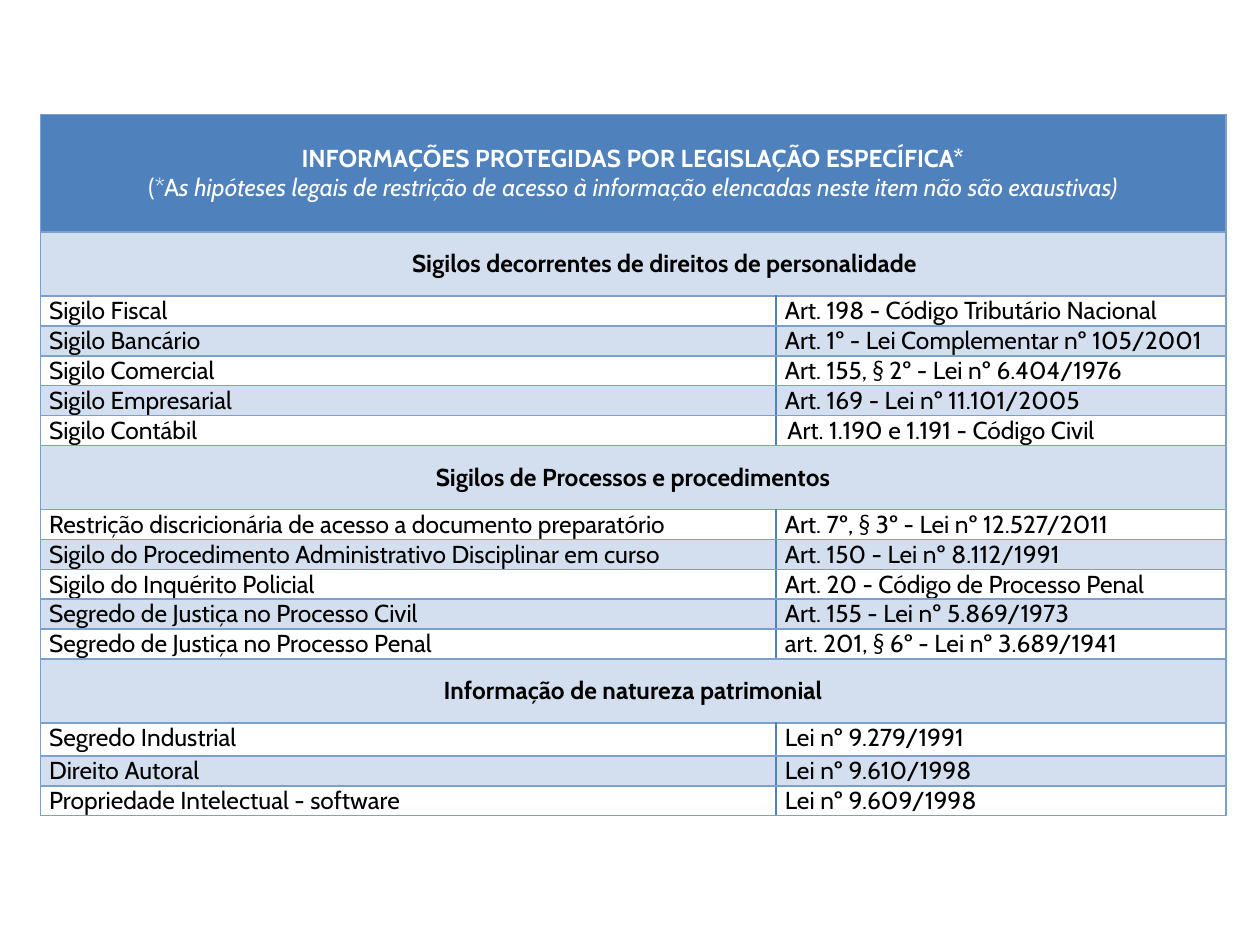
from pptx import Presentation
from pptx import util as u
from pptx.dml.color import RGBColor
from pptx.enum import text
from pptx.oxml.ns import qn
from lxml import etree

BLUE = RGBColor(0x4F, 0x81, 0xBD)
BORDER = RGBColor(0x7B, 0xA0, 0xCD)
PALE = RGBColor(0xD3, 0xDF, 0xEE)
WHITE = RGBColor(0xFF, 0xFF, 0xFF)
BLACK = RGBColor(0, 0, 0)
FONT, SIZE = "Cabin", 14

# Content: runs are (wording, bold, italic)
HEADING = [
    [("INFORMAÇÕES PROTEGIDAS POR LEGISLAÇÃO ESPECÍFICA*", True, False)],
    [("(*A", False, False),
     ("s hipóteses legais de restrição de acesso à informação elencadas "
      "neste item não são exaustivas)", False, True)],
]
SECTIONS = [
    ("Sigilos decorrentes de direitos de personalidade", [
        ("Sigilo Fiscal", "Art. 198 - Código Tributário Nacional"),
        ("Sigilo Bancário", "Art. 1º - Lei Complementar nº 105/2001"),
        ("Sigilo Comercial", "Art. 155, § 2º - Lei nº 6.404/1976"),
        ("Sigilo Empresarial", "Art. 169 - Lei nº 11.101/2005"),
        ("Sigilo Contábil", "Art. 1.190 e 1.191 - Código Civil"),
    ]),
    ("Sigilos de Processos e procedimentos", [
        ("Restrição discricionária de acesso a documento preparatório",
         "Art. 7º, § 3º - Lei nº 12.527/2011"),
        ("Sigilo do Procedimento Administrativo Disciplinar em curso",
         "Art. 150 - Lei nº 8.112/1991"),
        ("Sigilo do Inquérito Policial", "Art. 20 - Código de Processo Penal"),
        ("Segredo de Justiça no Processo Civil", "Art. 155 - Lei nº 5.869/1973"),
        ("Segredo de Justiça no Processo Penal", "art. 201, § 6º - Lei nº 3.689/1941"),
    ]),
    ("Informação de natureza patrimonial", [
        ("Segredo Industrial", "Lei nº 9.279/1991"),
        ("Direito Autoral", "Lei nº 9.610/1998"),
        ("Propriedade Intelectual - software", "Lei nº 9.609/1998"),
    ]),
]
INDENTS = {SECTIONS[0][0]: 0.5, "Art. 1.190 e 1.191 - Código Civil": 0.02}
TALL_ROWS = {"Segredo Industrial": 0.26}
LEFT, TOP = 0.32, 0.91
COLUMNS = [5.84, 3.57]
HEADING_HEIGHT, SECTION_HEIGHT, ITEM_HEIGHT = 0.93, 0.51, 0.23


def set_borders(cell, **colours):
    properties = cell._tc.get_or_add_tcPr()
    for side in "LRTB":
        line = etree.SubElement(properties, qn("a:ln" + side), w=str(u.Pt(1)))
        fill = etree.SubElement(line, qn("a:solidFill"))
        etree.SubElement(fill, qn("a:srgbClr"), val=str(colours.get(side, BORDER)))


def fill_cell(cell, lines, fill, align, colour=BLACK, middle=False, **borders):
    set_borders(cell, **borders)
    if fill is None:
        cell.fill.background()
    else:
        cell.fill.solid()
        cell.fill.fore_color.rgb = fill
    cell.margin_left = cell.margin_right = u.Inches(0.07)
    cell.margin_top = cell.margin_bottom = 0
    cell.vertical_anchor = text.MSO_ANCHOR.MIDDLE if middle else text.MSO_ANCHOR.TOP
    frame = cell.text_frame
    for index, runs in enumerate(lines):
        para = frame.add_paragraph() if index else frame.paragraphs[0]
        para.alignment = align
        indent = INDENTS.get(runs[0][0])
        if indent:
            para._p.get_or_add_pPr().set("marL", str(u.Inches(indent)))
        for wording, bold, italic in runs:
            span = para.add_run()
            span.text = wording
            span.font.name, span.font.size = FONT, u.Pt(SIZE)
            span.font.bold, span.font.italic = bold, italic
            span.font.color.rgb = colour


def fill_band(table, row, height, lines, fill, colour=BLACK):
    """One centred cell across both columns."""
    table.rows[row].height = u.Inches(height)
    first, last = table.cell(row, 0), table.cell(row, 1)
    first.merge(last)
    set_borders(last)
    fill_cell(first, lines, fill, text.PP_ALIGN.CENTER, colour, middle=True)


def main():
    deck = Presentation()
    deck.slide_width, deck.slide_height = u.Inches(10), u.Inches(7.5)
    page = deck.slides.add_slide(deck.slide_layouts[6])

    # Table grid
    row_count = 1 + sum(1 + len(items) for _, items in SECTIONS)
    table = page.shapes.add_table(
        row_count, len(COLUMNS), u.Inches(LEFT), u.Inches(TOP),
        u.Inches(sum(COLUMNS)), u.Inches(5.5)).table
    for column, width in zip(table.columns, COLUMNS):
        column.width = u.Inches(width)

    # Heading, then each section with alternating rows
    fill_band(table, 0, HEADING_HEIGHT, HEADING, BLUE, WHITE)
    row = 1
    for title, items in SECTIONS:
        fill_band(table, row, SECTION_HEIGHT, [[(title, True, False)]], PALE)
        for index, (subject, law) in enumerate(items):
            row += 1
            table.rows[row].height = u.Inches(TALL_ROWS.get(subject, ITEM_HEIGHT))
            fill = PALE if index % 2 else None
            for column, (wording, side) in enumerate([(subject, "R"), (law, "L")]):
                fill_cell(table.cell(row, column), [[(wording, False, False)]], fill,
                          text.PP_ALIGN.JUSTIFY, **{side: BLUE})
        row += 1

    deck.save("out.pptx")


if __name__ == "__main__":
    main()
